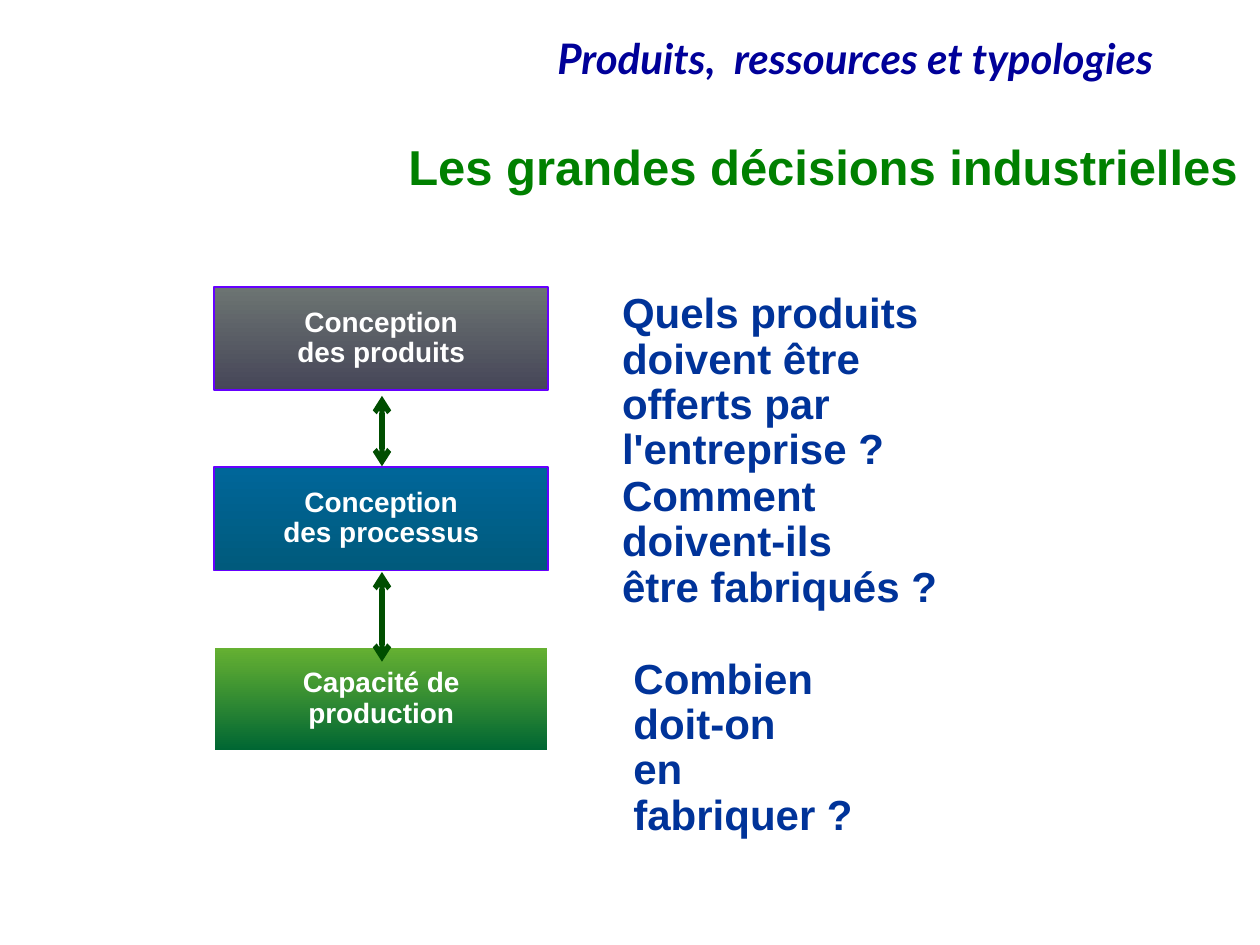
import pptx
import pptx.util
import pptx.dml.color
import pptx.enum.shapes
import pptx.enum.text
import pptx.oxml.ns
from lxml import etree

Cm, Pt = pptx.util.Cm, pptx.util.Pt
RGBColor = pptx.dml.color.RGBColor
ALIGN = pptx.enum.text.PP_ALIGN
ANCHOR = pptx.enum.text.MSO_ANCHOR

# Colours
NAVY = RGBColor(0x00, 0x00, 0x99)
GREEN = RGBColor(0x00, 0x80, 0x00)
BLUE = RGBColor(0x00, 0x33, 0x99)
VIOLET = RGBColor(0x66, 0x00, 0xFF)
DARK_GREEN = RGBColor(0x00, 0x4E, 0x00)
WHITE = RGBColor(0xFF, 0xFF, 0xFF)

# Content
HEADER = "Produits,  ressources et typologies"
TITLE = "Les grandes décisions industrielles"
# Step lines, gradient top, gradient bottom, outline
STEPS = [
    (["Conception", "des produits"], RGBColor(0x6C, 0x74, 0x72), RGBColor(0x46, 0x46, 0x58), VIOLET),
    (["Conception", "des processus"], RGBColor(0x00, 0x66, 0x99), RGBColor(0x00, 0x5A, 0x7C), VIOLET),
    (["Capacité de", "production"], RGBColor(0x66, 0xB1, 0x32), RGBColor(0x00, 0x66, 0x33), WHITE),
]
# Question lines, left and width in cm
QUESTIONS = [
    (["Quels produits doivent être", "offerts par l'entreprise ?"], 12.29, 8.89),
    (["Comment doivent-ils", "être fabriqués ?"], 12.29, 6.91),
    (["Combien doit-on", "en fabriquer ?"], 12.52, 5.64),
]
ARROWS = [(7.98, 9.4), (11.53, 13.34)]  # top and bottom in cm

# Layout in cm
STEP_LEFT, STEP_TOP, STEP_WIDTH, STEP_HEIGHT, STEP_PITCH = 4.32, 5.79, 6.73, 2.08, 3.63
QUESTION_TOP, QUESTION_PITCH = 5.77, 3.68
ARROW_X = 7.7


def write(shape, lines, size, color, font="Arial", italic=False, align=ALIGN.LEFT,
          anchor=ANCHOR.TOP, spacing=0.9, margins=(0.25, 0.13)):
    frame = shape.text_frame
    frame.word_wrap = True
    frame.auto_size = pptx.enum.text.MSO_AUTO_SIZE.NONE
    frame.vertical_anchor = anchor
    frame.margin_left = frame.margin_right = Cm(margins[0])
    frame.margin_top = frame.margin_bottom = Cm(margins[1])
    for index, line in enumerate(lines):
        para = frame.add_paragraph() if index else frame.paragraphs[0]
        para.alignment = align
        para.line_spacing = spacing
        span = para.add_run()
        span.text = line
        span.font.name = font
        span.font.size = Pt(size)
        span.font.bold = True
        span.font.italic = italic
        span.font.color.rgb = color


def add_arrow(page, top, bottom):
    arrow = page.shapes.add_connector(pptx.enum.shapes.MSO_CONNECTOR.STRAIGHT,
                                      Cm(ARROW_X), Cm(top), Cm(ARROW_X), Cm(bottom))
    arrow.line.color.rgb = DARK_GREEN
    arrow.line.width = Pt(3)
    outline = arrow.line._get_or_add_ln()
    for end in ("a:headEnd", "a:tailEnd"):
        etree.SubElement(outline, pptx.oxml.ns.qn(end), type="arrow")
    etree.SubElement(arrow._element.spPr, pptx.oxml.ns.qn("a:effectLst"))


def main():
    deck = pptx.Presentation()
    deck.slide_width, deck.slide_height = Cm(25.4), Cm(19.05)
    page = deck.slides.add_slide(deck.slide_layouts[5])

    # Header and title
    header = page.shapes.add_textbox(Cm(3.18), Cm(0.64), Cm(20.32), Cm(2.36))
    write(header, [HEADER], 24, NAVY, font="Lato", italic=True, align=ALIGN.RIGHT)
    title = page.shapes.title
    title.left, title.top, title.width, title.height = Cm(-5.89), Cm(1.93), Cm(31.09), Cm(2.39)
    write(title, [TITLE], 28, GREEN, align=ALIGN.RIGHT, anchor=ANCHOR.MIDDLE, spacing=Pt(45.8))

    # Decision steps
    for index, (lines, top_color, bottom_color, outline) in enumerate(STEPS):
        box = page.shapes.add_shape(
            pptx.enum.shapes.MSO_SHAPE.RECTANGLE, Cm(STEP_LEFT),
            Cm(STEP_TOP + index * STEP_PITCH), Cm(STEP_WIDTH), Cm(STEP_HEIGHT))
        box.shadow.inherit = False
        box.fill.gradient()
        box.fill.gradient_angle = 270
        for stop, color in zip(box.fill.gradient_stops, (top_color, bottom_color)):
            stop.color.rgb = color
        box.line.color.rgb = outline
        box.line.width = Pt(1)
        write(box, lines, 16, WHITE, align=ALIGN.CENTER, anchor=ANCHOR.MIDDLE, margins=(0, 0))

    # Links between steps
    for top, bottom in ARROWS:
        add_arrow(page, top, bottom)

    # Questions
    for index, (lines, left, width) in enumerate(QUESTIONS):
        box = page.shapes.add_textbox(Cm(left), Cm(QUESTION_TOP + index * QUESTION_PITCH),
                                      Cm(width), Cm(2.11))
        write(box, lines, 24, BLUE)

    deck.save("out.pptx")


if __name__ == "__main__":
    main()
